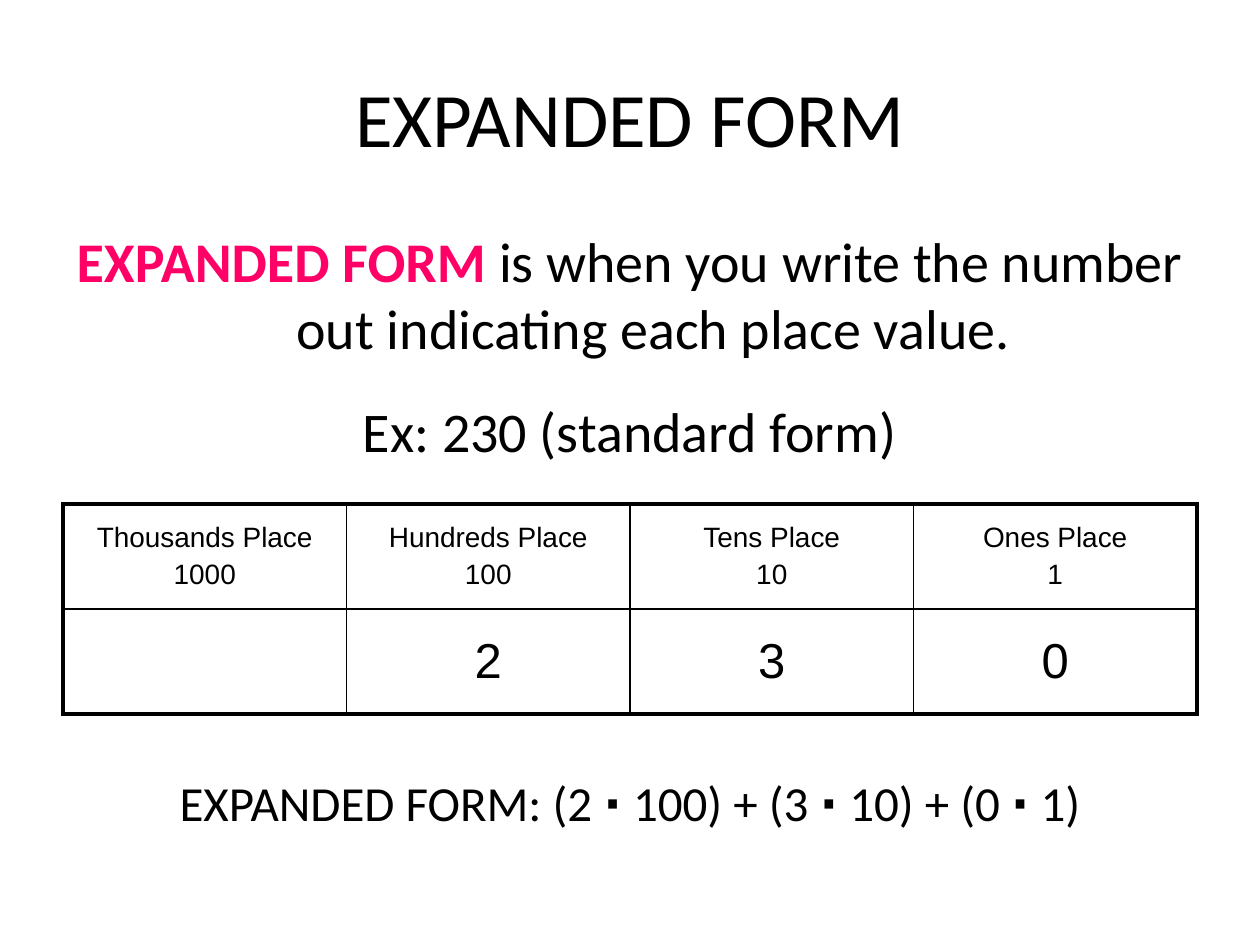
import pptx
import pptx.dml.color
import pptx.enum.text
import pptx.oxml
import pptx.oxml.ns
import pptx.util

Pt = pptx.util.Pt
CENTER = pptx.enum.text.PP_ALIGN.CENTER
MIDDLE = pptx.enum.text.MSO_ANCHOR.MIDDLE
BLACK = "000000"
PINK = "FF0066"


def color(hex_string):
    return pptx.dml.color.RGBColor.from_string(hex_string)


def write_paragraph(paragraph, runs, size, font_name="Calibri", space_before=0):
    """Fill a centred black paragraph with (text, bold) runs."""
    paragraph.alignment = CENTER
    paragraph.space_before = Pt(space_before)
    paragraph.font.size = Pt(size)
    paragraph.font.name = font_name
    paragraph.font.color.rgb = color(BLACK)
    for text, bold in runs:
        run = paragraph.add_run()
        run.text = text
        if bold:
            run.font.bold = True


presentation = pptx.Presentation()
presentation.slide_width = Pt(720)
presentation.slide_height = Pt(540)
slide = presentation.slides.add_slide(presentation.slide_layouts[6])

# Title, definition with example, and answer
text_frames = []
for left, top, width, height in [
    (36, 21.6, 648, 90),
    (36, 126, 648, 150),
    (0, 438, 720, 41),
]:
    text_frame = slide.shapes.add_textbox(Pt(left), Pt(top), Pt(width), Pt(height)).text_frame
    text_frame.word_wrap = True
    text_frames.append(text_frame)
title, definition, answer = text_frames

title.vertical_anchor = MIDDLE
write_paragraph(title.paragraphs[0], [("EXPANDED FORM", False)], 44)

meaning = definition.paragraphs[0]
write_paragraph(
    meaning,
    [("EXPANDED FORM", True), (" is when you write the number out indicating each place value.", False)],
    32,
    space_before=2,
)
meaning.runs[0].font.color.rgb = color(PINK)
example = definition.add_paragraph()
write_paragraph(example, [("Ex: 230 (standard form)", False)], 32, space_before=20)
for paragraph in definition.paragraphs:
    properties = paragraph._p.get_or_add_pPr()
    properties.set("marL", str(Pt(27)))
    properties.set("indent", str(Pt(-27)))

write_paragraph(
    answer.paragraphs[0],
    [
        ("EXPANDED FORM: (2 ", False),
        ("∙", True),
        (" 100) + (3 ", False),
        ("∙", True),
        (" 10) + (0 ", False),
        ("∙", True),
        (" 1)", False),
    ],
    28,
)

# Place value table
places = [("Thousands", "1000", ""), ("Hundreds", "100", "2"), ("Tens", "10", "3"), ("Ones", "1", "0")]
row_count, column_count = 2, len(places)
table_frame = slide.shapes.add_table(row_count, column_count, Pt(36), Pt(288), Pt(648), Pt(120))
table = table_frame.table
table.first_row = False
table.horz_banding = False

for column, (place, value, digit) in enumerate(places):
    header = table.cell(0, column).text_frame
    write_paragraph(header.paragraphs[0], [(f"{place} Place", False)], 16, "Arial", 3)
    write_paragraph(header.add_paragraph(), [(value, False)], 16, "Arial", 3)
    if digit:
        digit_paragraph = table.cell(1, column).text_frame.paragraphs[0]
        write_paragraph(digit_paragraph, [(digit, False)], 28, "Arial")

    for row in range(row_count):
        cell = table.cell(row, column)
        cell.vertical_anchor = MIDDLE
        outer_edges = {
            "lnL": column == 0,
            "lnR": column == column_count - 1,
            "lnT": row == 0,
            "lnB": row == row_count - 1,
        }
        cell_properties = cell._tc.get_or_add_tcPr()
        for tag, is_outer in outer_edges.items():
            line_width = Pt(2.25 if is_outer else 1)
            cell_properties.append(
                pptx.oxml.parse_xml(
                    f'<a:{tag} {pptx.oxml.ns.nsdecls("a")} w="{line_width}">'
                    f'<a:solidFill><a:srgbClr val="{BLACK}"/></a:solidFill></a:{tag}>'
                )
            )
        cell.fill.background()

presentation.save("out.pptx")
